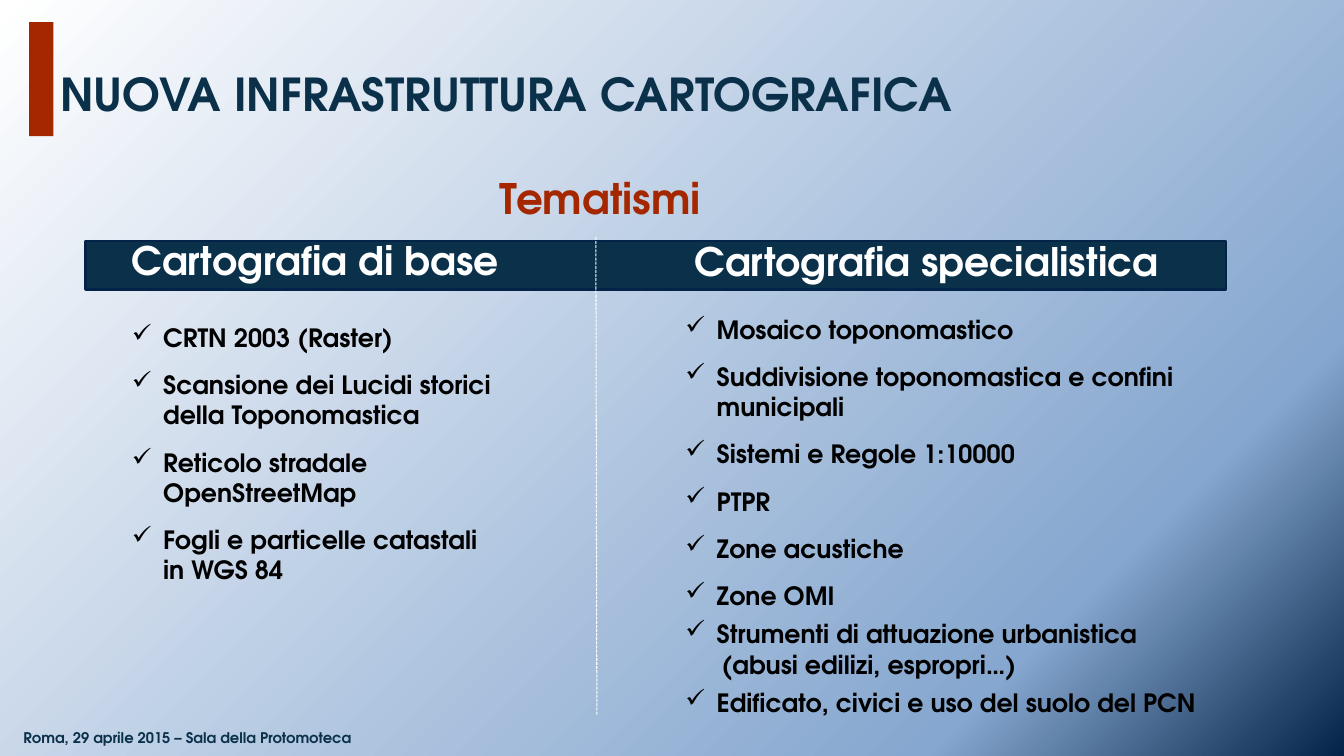
from lxml.etree import SubElement
from pptx import Presentation
from pptx.dml.color import RGBColor
from pptx.enum.dml import MSO_LINE
from pptx.enum.shapes import MSO_CONNECTOR, MSO_SHAPE
from pptx.enum.text import MSO_ANCHOR, PP_ALIGN
from pptx.oxml.ns import qn
from pptx.util import Inches, Pt

FONT = "TeX Gyre Adventor"
NAVY = RGBColor(0x0A, 0x30, 0x4A)
DEEP_NAVY = RGBColor(0x04, 0x23, 0x48)
SKY = RGBColor(0x86, 0xA7, 0xCF)
RUST = RGBColor(0xA4, 0x27, 0x00)
WHITE = RGBColor(0xFF, 0xFF, 0xFF)
BLACK = RGBColor(0, 0, 0)

BACKGROUND_STOPS = [(0, WHITE), (80, SKY), (100, DEEP_NAVY)]
BULLET_INDENT = 0.31
CONTINUATION_INDENT = 0.36

BASE_MAPS = [
    "CRTN 2003 (Raster)",
    "Scansione dei Lucidi storici della Toponomastica",
    "Reticolo stradale OpenStreetMap",
    "Fogli e particelle catastali in WGS 84",
]
SPECIALIST_MAPS = [
    "Mosaico toponomastico",
    "Suddivisione toponomastica e confini municipali",
    "Sistemi e Regole 1:10000",
    "PTPR",
    "Zone acustiche",
    "Zone OMI",
    ("Strumenti di attuazione urbanistica", "(abusi edilizi, espropri…)"),
    "Edificato, civici e uso del suolo del PCN",
]


def add_text(frame, text, size=18, color=BLACK, align=PP_ALIGN.LEFT,
             bullet=None, indent=0, before=0, after=0, first=True):
    paragraph = frame.paragraphs[0] if first else frame.add_paragraph()
    paragraph.alignment = align
    paragraph.space_before = Pt(0 if first else before)
    paragraph.space_after = Pt(after)
    properties = paragraph._p.get_or_add_pPr()
    properties.set("marL", str(Inches(indent)))
    properties.set("indent", str(Inches(-indent if bullet else 0)))
    if bullet:
        SubElement(properties, qn("a:buChar")).set("char", bullet)
    else:
        SubElement(properties, qn("a:buNone"))
    run = paragraph.add_run()
    run.text = text
    run.font.name = FONT
    run.font.size = Pt(size)
    run.font.bold = True
    run.font.color.rgb = color


def add_frame(slide, box, anchor=MSO_ANCHOR.MIDDLE, wrap=True):
    frame = slide.shapes.add_textbox(*map(Inches, box)).text_frame
    frame.word_wrap = wrap
    frame.vertical_anchor = anchor
    return frame


def add_block(slide, box, fill, line=None):
    block = slide.shapes.add_shape(MSO_SHAPE.RECTANGLE, *map(Inches, box))
    block.shadow.inherit = False
    block.fill.solid()
    block.fill.fore_color.rgb = fill
    if line is None:
        block.line.fill.background()
    else:
        block.line.color.rgb = line
        block.line.width = Pt(2)


def paint_background(slide):
    fill = slide.background.fill
    fill.gradient()
    gradient = slide.background._cSld.find(".//" + qn("a:gradFill"))
    stops = gradient.find(qn("a:gsLst"))
    for stop in list(stops):
        stops.remove(stop)
    for position, color in BACKGROUND_STOPS:
        stop = SubElement(stops, qn("a:gs"), pos=str(position * 1000))
        SubElement(stop, qn("a:srgbClr"), val=str(color))
    fill.gradient_angle = 315


def add_title(slide, box):
    left, top, width, height = box
    add_block(slide, (left, top, 0.24, height), RUST)
    frame = add_frame(slide, (left + 0.21, top + 0.39, width - 0.21, 0.91),
                      anchor=MSO_ANCHOR.TOP)
    add_text(frame, "NUOVA INFRASTRUTTURA CARTOGRAFICA", size=32.4, color=NAVY)


def add_heading(slide, box, text, size=28, color=WHITE):
    add_text(add_frame(slide, box), text, size=size, color=color,
             align=PP_ALIGN.CENTER)


def add_checklist(slide, box, items):
    frame = add_frame(slide, box)
    for index, item in enumerate(items):
        if isinstance(item, tuple):
            lead, continuation = item
            add_text(frame, lead, bullet="✓", indent=BULLET_INDENT, first=False)
            add_text(frame, continuation, indent=CONTINUATION_INDENT, first=False)
        else:
            add_text(frame, item, bullet="✓", indent=BULLET_INDENT,
                     before=6, after=6, first=index == 0)


def add_divider(slide, start, end):
    divider = slide.shapes.add_connector(MSO_CONNECTOR.STRAIGHT,
                                         *map(Inches, start + end))
    divider.line.color.rgb = WHITE
    divider.line.width = Pt(0.75)
    divider.line.dash_style = MSO_LINE.SQUARE_DOT
    SubElement(divider._element.spPr, qn("a:effectLst"))


def add_themes(slide, box):
    left, top, width, height = box
    bar_top = top + 0.64
    list_top = top + 1.28
    add_heading(slide, (left + 2.91, top, 4.39, 0.43), "Tematismi",
                size=30, color=RUST)
    add_block(slide, (left, bar_top, width, 0.48), NAVY, line=DEEP_NAVY)
    add_heading(slide, (left + 0.08, bar_top - 0.03, 4.39, 0.43),
                "Cartografia di base")
    add_heading(slide, (left + 5.66, bar_top - 0.04, 5.36, 0.48),
                "Cartografia specialistica")
    add_checklist(slide, (left + 0.36, list_top, 3.82, 2.94), BASE_MAPS)
    add_checklist(slide, (left + 5.85, list_top, 5.42, 4.18), SPECIALIST_MAPS)
    add_divider(slide, (left + 5.06, bar_top - 0.04),
                (left + 5.07, top + height))


def add_footer(slide, box):
    frame = add_frame(slide, box, anchor=MSO_ANCHOR.TOP, wrap=False)
    frame.margin_left = frame.margin_right = frame.margin_bottom = 0
    frame.margin_top = Inches(0.04)
    add_text(frame, "Roma, 29 aprile 2015 – Sala della Protomoteca",
             size=10.5, color=NAVY, align=PP_ALIGN.CENTER)


def main():
    presentation = Presentation()
    presentation.slide_width = Inches(13.33)
    presentation.slide_height = Inches(7.5)
    slide = presentation.slides.add_slide(presentation.slide_layouts[6])
    paint_background(slide)
    add_title(slide, (0.29, 0.22, 9.52, 1.13))
    add_themes(slide, (0.85, 1.75, 11.31, 5.34))
    add_footer(slide, (0.2, 7.19, 3.32, 0.25))
    presentation.save("out.pptx")


if __name__ == "__main__":
    main()
